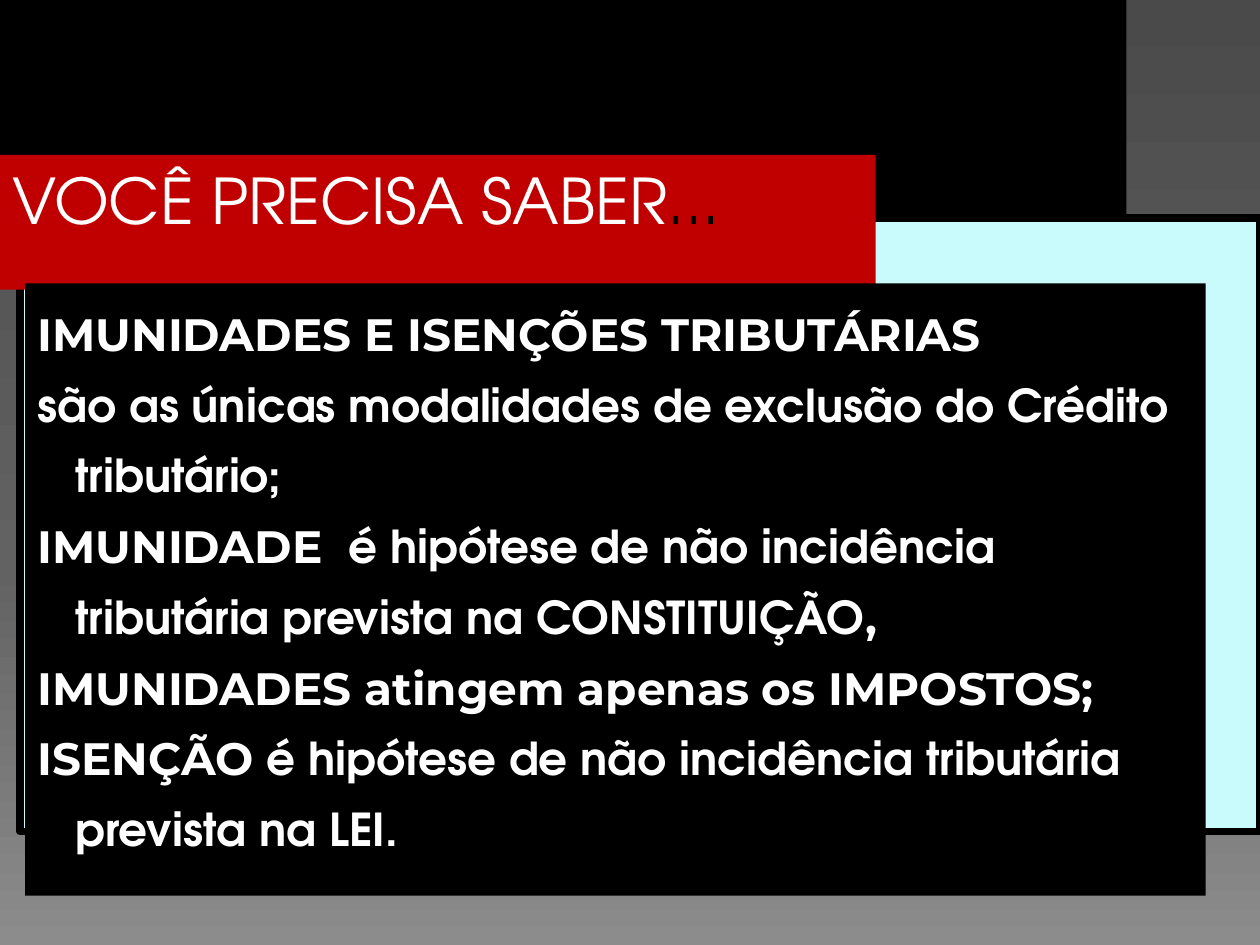
from copy import deepcopy

from pptx import Presentation
from pptx.dml.color import RGBColor
from pptx.enum.shapes import MSO_SHAPE
from pptx.enum.text import MSO_ANCHOR, PP_ALIGN
from pptx.oxml.ns import qn
from pptx.util import Inches, Pt

RECT = MSO_SHAPE.RECTANGLE
TOP = MSO_ANCHOR.TOP
LEFT = PP_ALIGN.LEFT

BLACK = RGBColor(0x00, 0x00, 0x00)
WHITE = RGBColor(0xFF, 0xFF, 0xFF)
RED = RGBColor(0xC0, 0x00, 0x00)
PALE_CYAN = RGBColor(0xC9, 0xFA, 0xFC)
GRADIENT = [(0, RGBColor(0x4A, 0x4A, 0x4A)),
            (0.6, RGBColor(0x62, 0x62, 0x62)),
            (1, RGBColor(0x8C, 0x8C, 0x8C))]

HEAVY = "Montserrat"
BODY = "TeX Gyre Adventor"

PARAGRAPHS = [
    [("IMUNIDADES E ISENÇÕES TRIBUTÁRIAS", HEAVY)],
    [("são as únicas modalidades de exclusão do Crédito tributário;", BODY)],
    [("IMUNIDADE  ", HEAVY),
     ("é hipótese de não incidência tributária prevista na CONSTITUIÇÃO", BODY),
     (",", HEAVY)],
    [("IMUNIDADES atingem apenas os IMPOSTOS;", HEAVY)],
    [("ISENÇÃO ", HEAVY),
     ("é hipótese de não incidência tributária prevista na LEI.", BODY)],
]


def paint_background(s):
    fill = s.background.fill
    fill.gradient()
    fill.gradient_angle = 270
    stops = s.element.find(".//" + qn("a:gsLst"))
    stops.append(deepcopy(stops[-1]))
    for stop, (position, color) in zip(fill.gradient_stops, GRADIENT):
        stop.position = position
        stop.color.rgb = color


def add_panel(s, box, color, border=None):
    sp = s.shapes.add_shape(RECT, *(Inches(v) for v in box))
    sp.shadow.inherit = False
    sp.fill.solid()
    sp.fill.fore_color.rgb = color
    if border:
        sp.line.color.rgb = BLACK
        sp.line.width = border
    else:
        sp.line.fill.background()
    return sp


def top_text_frame(sp):
    tf = sp.text_frame
    tf.word_wrap = True
    tf.vertical_anchor = TOP
    return tf


def add_run(p, text, font, size, color, bold=False):
    r = p.add_run()
    r.text = text
    r.font.name = font
    r.font.size = Pt(size)
    r.font.bold = bold
    r.font.color.rgb = color


def add_title(s, box):
    p = top_text_frame(add_panel(s, box, RED)).paragraphs[0]
    p.alignment = LEFT
    add_run(p, "VOCÊ PRECISA SABER", BODY, 36, WHITE)
    add_run(p, "...", BODY, 36, BLACK)


def add_body(s, box):
    tf = top_text_frame(add_panel(s, box, BLACK))
    for i, runs in enumerate(PARAGRAPHS):
        p = tf.add_paragraph() if i else tf.paragraphs[0]
        p.alignment = LEFT
        p.line_spacing = 1.3
        pPr = p._p.get_or_add_pPr()
        pPr.set("marL", str(Inches(0.3)))
        pPr.set("indent", str(Inches(-0.3)))
        for text, font in runs:
            add_run(p, text, font, 25.9, WHITE, bold=True)


def main():
    prs = Presentation()
    prs.slide_width, prs.slide_height = Inches(10), Inches(7.5)
    s = prs.slides.add_slide(prs.slide_layouts[6])
    paint_background(s)
    add_panel(s, (0, 0, 8.94, 1.71), BLACK)
    add_panel(s, (0.16, 1.73, 9.84, 4.87), PALE_CYAN, border=Pt(4.5))
    add_title(s, (0, 1.23, 6.95, 1.07))
    add_body(s, (0.2, 2.25, 9.37, 4.86))
    prs.save("out.pptx")


if __name__ == "__main__":
    main()
